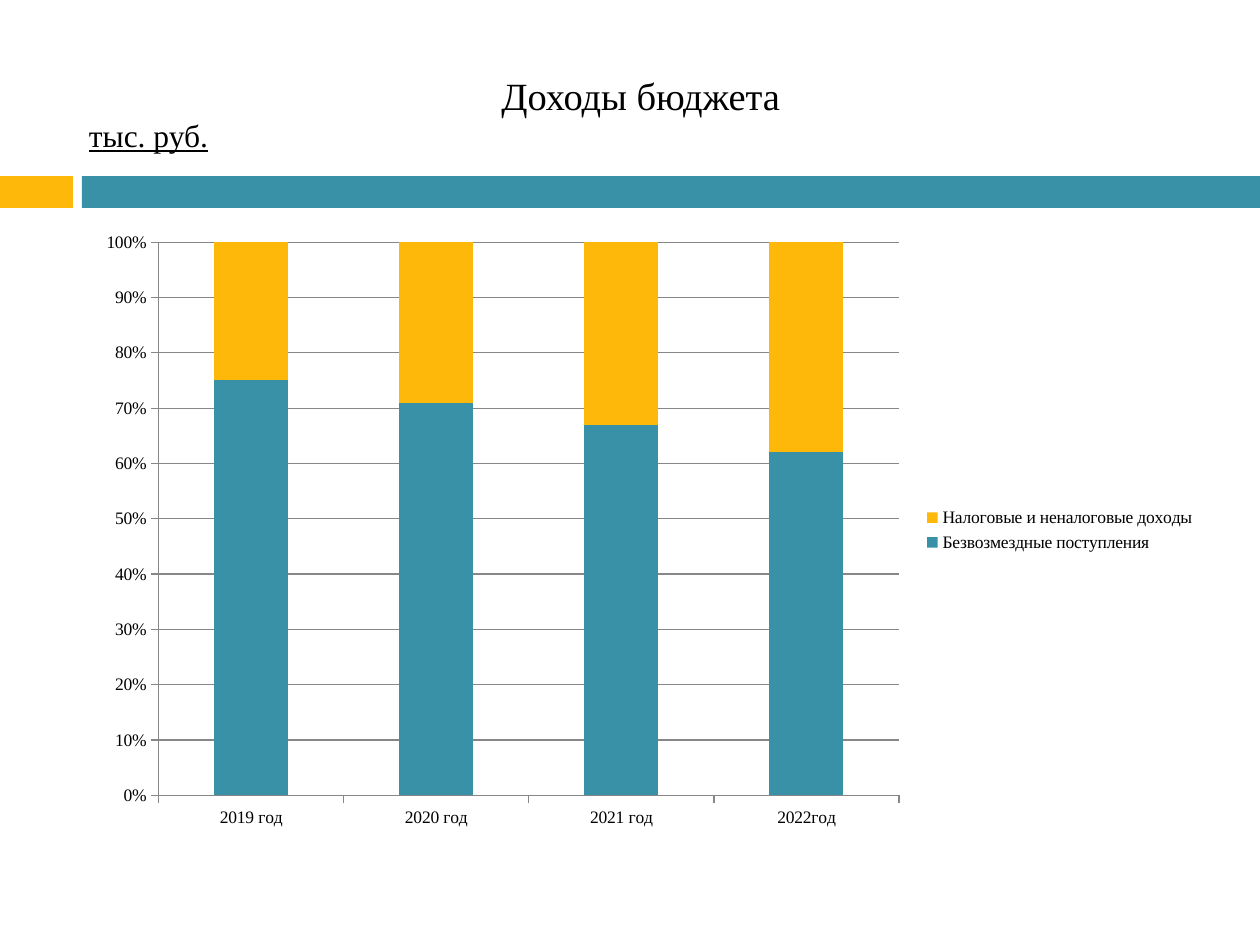
from dataclasses import dataclass

from pptx import Presentation
from pptx.chart.data import CategoryChartData
from pptx.dml.color import RGBColor
from pptx.enum.chart import XL_CHART_TYPE, XL_LEGEND_POSITION, XL_TICK_MARK
from pptx.enum.shapes import MSO_SHAPE
from pptx.enum.text import MSO_ANCHOR, PP_ALIGN
from pptx.util import Emu, Pt

PX_PER_INCH = 126
FONT = "Times New Roman"
BLACK = RGBColor(0x00, 0x00, 0x00)
WHITE = RGBColor(0xFF, 0xFF, 0xFF)
GRAY = RGBColor(0x87, 0x87, 0x87)
TEAL = RGBColor(0x38, 0x91, 0xA7)
AMBER = RGBColor(0xFE, 0xB8, 0x0A)


@dataclass(frozen=True)
class Area:
    left: int
    top: int
    width: int
    height: int

    def emu(self) -> tuple:
        return tuple(px(v) for v in (self.left, self.top, self.width, self.height))


@dataclass(frozen=True)
class Block:
    area: Area
    fill: RGBColor


@dataclass(frozen=True)
class Income:
    name: str
    shares: tuple
    color: RGBColor


BARS = (
    Block(Area(0, 176, 73, 32), AMBER),
    Block(Area(82, 176, 1178, 32), TEAL),
)
UNIT = Block(Area(64, 115, 169, 40), WHITE)
TITLE_AREA = Area(105, 45, 1081, 100)
CHART_AREA = Area(84, 220, 1124, 620)
YEARS = ("2019 год", "2020 год", "2021 год", "2022год")
INCOMES = (
    Income("Безвозмездные поступления", (75, 71, 67, 62), TEAL),
    Income("Налоговые и неналоговые доходы", (25, 29, 33, 38), AMBER),
)


def px(value: int) -> Emu:
    return Emu(round(value * 914400 / PX_PER_INCH))


def add_block(slide, block: Block):
    shape = slide.shapes.add_shape(MSO_SHAPE.RECTANGLE, *block.area.emu())
    shape.shadow.inherit = False
    shape.fill.solid()
    shape.fill.fore_color.rgb = block.fill
    shape.line.fill.background()
    return shape


def write_line(frame, text: str, size: int, underline: bool = False) -> None:
    frame.word_wrap = True
    frame.vertical_anchor = MSO_ANCHOR.MIDDLE
    para = frame.paragraphs[0]
    para.alignment = PP_ALIGN.CENTER
    span = para.add_run()
    span.text = text
    span.font.name = FONT
    span.font.size = Pt(size)
    span.font.color.rgb = BLACK
    span.font.underline = underline


def place_title(slide) -> None:
    title = slide.shapes.title
    title.left, title.top, title.width, title.height = TITLE_AREA.emu()
    write_line(title.text_frame, "Доходы бюджета ", 22)


def add_unit(slide) -> None:
    box = add_block(slide, UNIT)
    box.line.color.rgb = WHITE
    box.line.width = Pt(1.5)
    write_line(box.text_frame, "тыс. руб.", 18, underline=True)


def style_axis(axis) -> None:
    axis.major_tick_mark = XL_TICK_MARK.OUTSIDE
    axis.minor_tick_mark = XL_TICK_MARK.NONE
    axis.format.line.color.rgb = GRAY


def add_income_chart(slide) -> None:
    data = CategoryChartData()
    data.categories = YEARS
    for income in INCOMES:
        data.add_series(income.name, income.shares)
    chart = slide.shapes.add_chart(
        XL_CHART_TYPE.COLUMN_STACKED_100, *CHART_AREA.emu(), data
    ).chart
    chart.has_title = False
    chart.font.name = FONT
    chart.font.size = Pt(10)
    chart.font.color.rgb = BLACK
    chart.has_legend = True
    chart.legend.position = XL_LEGEND_POSITION.RIGHT
    chart.legend.include_in_layout = False

    plot = chart.plots[0]
    plot.gap_width = 150
    plot.overlap = 100
    plot.vary_by_categories = False
    for series, income in zip(plot.series, INCOMES):
        series.format.fill.solid()
        series.format.fill.fore_color.rgb = income.color

    style_axis(chart.category_axis)
    value_axis = chart.value_axis
    style_axis(value_axis)
    value_axis.minimum_scale = 0
    value_axis.maximum_scale = 1
    value_axis.major_unit = 0.1
    value_axis.tick_labels.number_format = "0%"
    value_axis.tick_labels.number_format_is_linked = False
    value_axis.has_major_gridlines = True
    value_axis.major_gridlines.format.line.color.rgb = GRAY


def main() -> None:
    deck = Presentation()
    deck.slide_width = px(1260)
    deck.slide_height = px(945)
    slide = deck.slides.add_slide(deck.slide_layouts[5])
    for bar in BARS:
        add_block(slide, bar)
    place_title(slide)
    add_unit(slide)
    add_income_chart(slide)
    deck.save("out.pptx")


if __name__ == "__main__":
    main()
